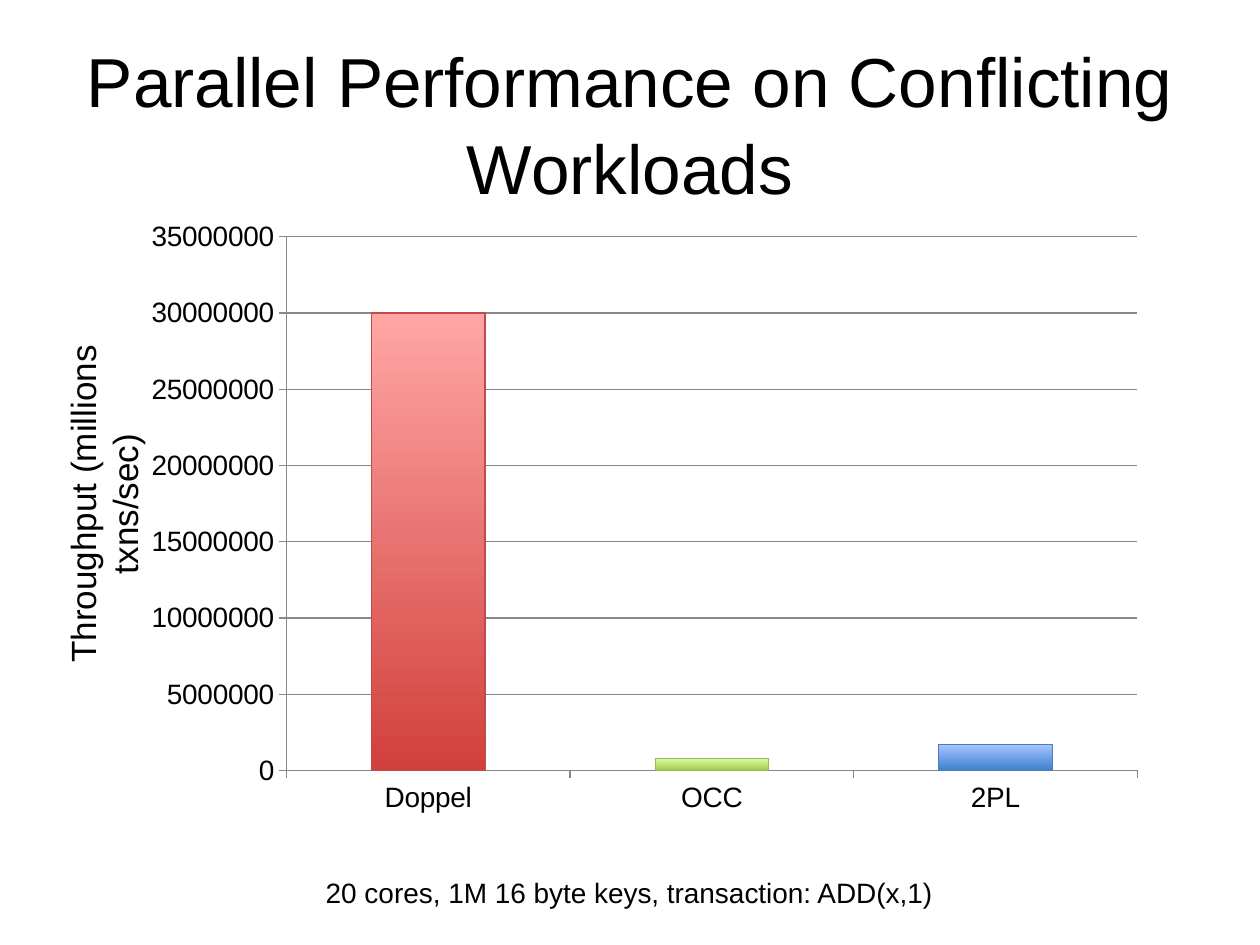
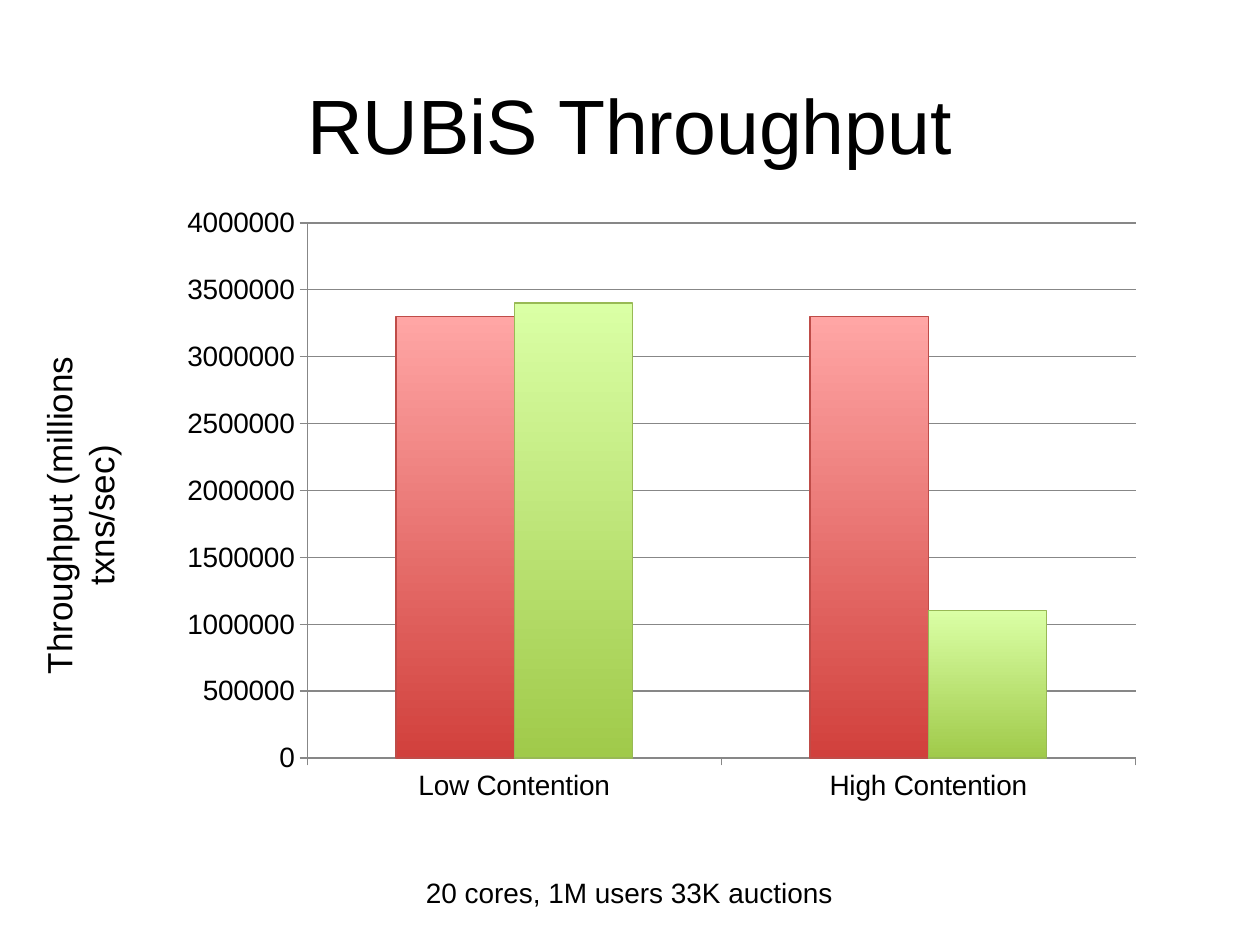
import dataclasses

import pptx
import pptx.chart.data
import pptx.dml.color
import pptx.enum.chart
import pptx.enum.text
import pptx.util

Cm = pptx.util.Cm
Pt = pptx.util.Pt
RGB = pptx.dml.color.RGBColor.from_string


@dataclasses.dataclass(frozen=True)
class Theme:
    font: str = "Arial"
    text: str = "000000"
    background: str = "FFFFFF"
    grid: str = "878787"
    bars: tuple = (
        ("D1403C", "FFA6A5", "BF4C48"),
        ("A0CA4A", "DAFFA5", "98B955"),
        ("3F80CE", "A4C4FF", "4A7EBB"),
    )
    title_size: float = 44
    long_title_size: float = 39.6
    axis_title_size: float = 20
    label_size: float = 16
    line_width: float = 0.75


class Deck:
    def __init__(self, theme):
        self.theme = theme
        self.prs = pptx.Presentation()
        self.prs.slide_width = Cm(25.4)
        self.prs.slide_height = Cm(19.05)
        self.s = None

    def add_slide(self):
        self.s = self.prs.slides.add_slide(self.prs.slide_layouts[6])
        fill = self.s.background.fill
        fill.solid()
        fill.fore_color.rgb = RGB(self.theme.background)

    def style_font(self, font, size):
        font.name = self.theme.font
        font.size = Pt(size)
        font.color.rgb = RGB(self.theme.text)

    def style_line(self, line, color):
        line.color.rgb = RGB(color)
        line.width = Pt(self.theme.line_width)

    def add_text(self, text, left, top, width, height, size, wrap=False):
        sp = self.s.shapes.add_textbox(Cm(left), Cm(top), Cm(width), Cm(height))
        tf = sp.text_frame
        tf.word_wrap = wrap
        tf.vertical_anchor = pptx.enum.text.MSO_ANCHOR.MIDDLE
        tf.text = text
        p = tf.paragraphs[0]
        p.alignment = pptx.enum.text.PP_ALIGN.CENTER
        self.style_font(p.runs[0].font, size)
        return sp

    def add_title(self, text, size):
        sp = self.add_text(text, 1.27, 0.76, 22.86, 3.18, size, wrap=True)
        sp.text_frame.margin_top = Cm(0.33)
        sp.text_frame.paragraphs[0].line_spacing = 1.04

    def add_axis_title(self, text, left, top):
        sp = self.add_text(text, left, top, 8.84, 2.54, self.theme.axis_title_size)
        sp.rotation = 270

    def add_caption(self, text):
        self.add_text(text, 4.01, 17.35, 17.35, 1.27, self.theme.label_size)

    def paint_bar(self, fmt, colors):
        bottom, top, outline = colors
        fmt.fill.gradient()
        fmt.fill.gradient_angle = 90
        for stop, color in zip(fmt.fill.gradient_stops, (bottom, top)):
            stop.color.rgb = RGB(color)
        self.style_line(fmt.line, outline)

    def style_axis(self, axis):
        axis.major_tick_mark = pptx.enum.chart.XL_TICK_MARK.OUTSIDE
        axis.minor_tick_mark = pptx.enum.chart.XL_TICK_MARK.NONE
        self.style_font(axis.tick_labels.font, self.theme.label_size)
        self.style_line(axis.format.line, self.theme.grid)

    def add_columns(self, box, categories, series, maximum, step, color_points=False):
        data = pptx.chart.data.CategoryChartData()
        data.categories = categories
        for number, values in enumerate(series, 1):
            data.add_series(f"Series {number}", values)
        kind = pptx.enum.chart.XL_CHART_TYPE.COLUMN_CLUSTERED
        chart = self.s.shapes.add_chart(kind, *map(Cm, box), data).chart
        chart.has_title = False
        chart.has_legend = False
        self.style_font(chart.font, self.theme.label_size)

        self.style_axis(chart.category_axis)
        axis = chart.value_axis
        self.style_axis(axis)
        axis.minimum_scale = 0
        axis.maximum_scale = maximum
        axis.major_unit = step
        axis.has_major_gridlines = True
        self.style_line(axis.major_gridlines.format.line, self.theme.grid)

        plot = chart.plots[0]
        plot.gap_width = 150
        plot.overlap = 0
        plot.vary_by_categories = False
        if color_points:
            points = plot.series[0].points
            bars = [points[i] for i in range(len(categories))]
        else:
            bars = plot.series
        for bar, colors in zip(bars, self.theme.bars):
            self.paint_bar(bar.format, colors)


def main():
    theme = Theme()
    deck = Deck(theme)
    throughput = "Throughput (millions txns/sec)"

    deck.add_slide()
    deck.add_title("Parallel Performance on Conflicting Workloads", theme.long_title_size)
    deck.add_axis_title(throughput, -2.34, 8.89)
    deck.add_caption("20 cores, 1M 16 byte keys, transaction: ADD(x,1)")
    deck.add_columns(
        (2.64, 4.22, 20.7, 12.42),
        ("Doppel", "OCC", "2PL"),
        [(30000000, 800000, 1700000)],
        maximum=35000000,
        step=5000000,
        color_points=True,
    )

    deck.add_slide()
    deck.add_title("RUBiS Throughput", theme.title_size)
    deck.add_axis_title(throughput, -2.82, 9.12)
    deck.add_caption("20 cores, 1M users 33K auctions")
    deck.add_columns(
        (3.38, 3.94, 19.91, 12.45),
        ("Low Contention", "High Contention"),
        [(3300000, 3300000), (3400000, 1100000)],
        maximum=4000000,
        step=500000,
    )

    deck.prs.save("out.pptx")


if __name__ == "__main__":
    main()
